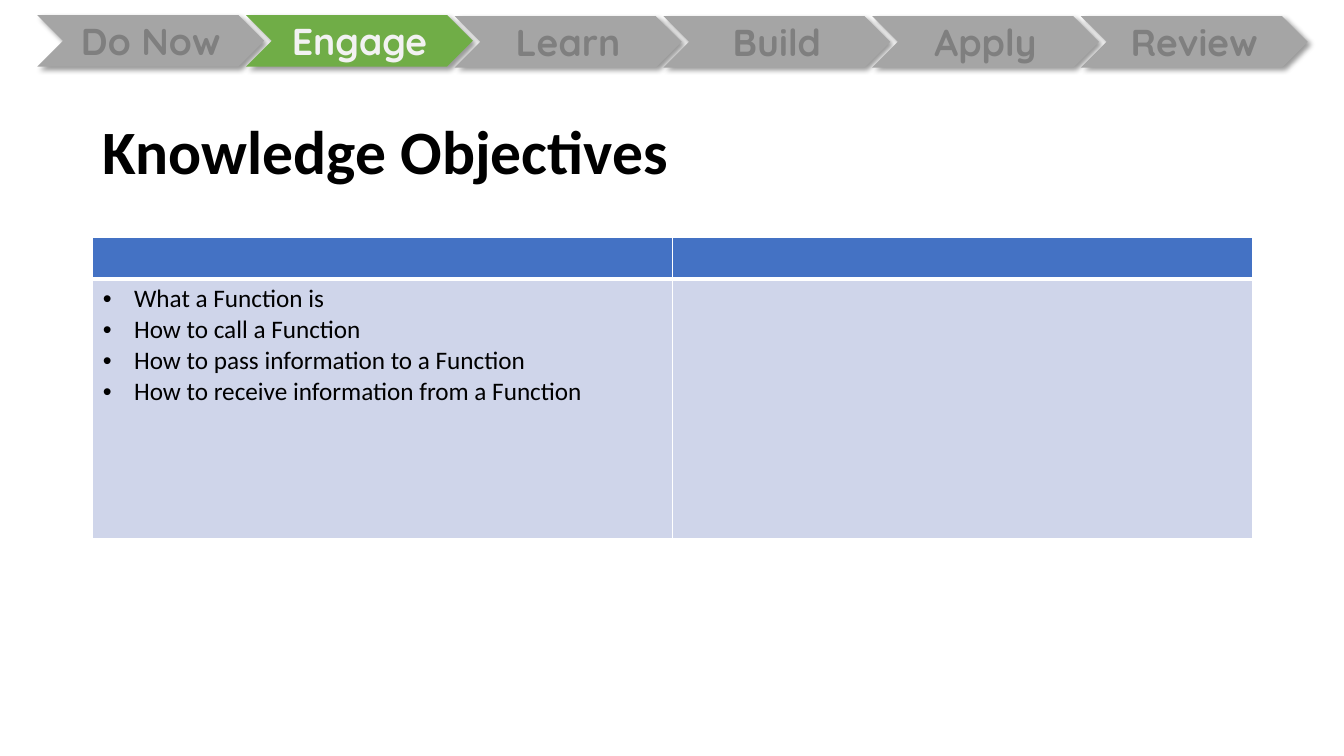
from lxml import etree
from pptx import Presentation
from pptx.dml.color import RGBColor
from pptx.enum.shapes import MSO_SHAPE
from pptx.enum.text import MSO_ANCHOR, PP_ALIGN
from pptx.oxml.ns import qn
from pptx.util import Inches, Pt

CHEVRON = MSO_SHAPE.CHEVRON
MIDDLE = MSO_ANCHOR.MIDDLE
LEFT, CENTER = PP_ALIGN.LEFT, PP_ALIGN.CENTER

STAGES = ["Do Now", "Engage", "Learn", "Build", "Apply", "Review"]
CURRENT_STAGE = "Engage"
OBJECTIVES = [
    "What a Function is",
    "How to call a Function",
    "How to pass information to a Function",
    "How to receive information from a Function",
]


def rgb(color):
    return RGBColor.from_string(color)


def style(p, font, size, color, bold=False):
    for r in p.runs:
        r.font.name = font
        r.font.size = Pt(size)
        r.font.bold = bold
        r.font.color.rgb = rgb(color)


def add_solid(parent, color):
    fill = etree.SubElement(parent, qn("a:solidFill"))
    return etree.SubElement(fill, qn("a:srgbClr"), val=color)


def add_shadow(sp):
    """Soft black shadow falling to the lower right."""
    sp.shadow.inherit = False
    effects = sp._element.spPr.find(qn("a:effectLst"))
    shadow = etree.SubElement(
        effects, qn("a:outerShdw"), blurRad=str(Pt(4)), dist=str(Pt(3)),
        dir=str(45 * 60000), algn="tl", rotWithShape="0")
    color = etree.SubElement(shadow, qn("a:srgbClr"), val="000000")
    etree.SubElement(color, qn("a:alpha"), val="40000")


def add_stage(s, label, left, top):
    current = label == CURRENT_STAGE
    sp = s.shapes.add_shape(CHEVRON, Inches(left), Inches(top),
                            Inches(2.25), Inches(0.51))
    sp.fill.solid()
    sp.fill.fore_color.rgb = rgb("70AD47" if current else "A5A5A5")
    sp.line.fill.background()
    add_shadow(sp)
    tf = sp.text_frame
    tf.text = label
    tf.vertical_anchor = MIDDLE
    p = tf.paragraphs[0]
    p.alignment = CENTER
    style(p, "Quicksand", 26.7, "F2F2F2" if current else "7F7F7F", bold=True)


def set_title(s, text):
    title = s.shapes.title
    title.left, title.top = Inches(0.92), Inches(0.81)
    title.width, title.height = Inches(11.5), Inches(1.45)
    tf = title.text_frame
    tf.text = text
    tf.vertical_anchor = MIDDLE
    p = tf.paragraphs[0]
    p.alignment = LEFT
    p.line_spacing = 0.9
    style(p, "Calibri", 44, "000000", bold=True)


def format_cell(cell, fill, top=1, bottom=1):
    """White borders, widths in points, and a plain fill."""
    tcPr = cell._tc.get_or_add_tcPr()
    for side, width in (("L", 1), ("R", 1), ("T", top), ("B", bottom)):
        add_solid(etree.SubElement(tcPr, qn("a:ln" + side), w=str(Pt(width))),
                  "FFFFFF")
    cell.fill.solid()
    cell.fill.fore_color.rgb = rgb(fill)


def add_bullet(p):
    pPr = p._p.get_or_add_pPr()
    indent = Inches(0.31)
    pPr.set("marL", str(indent))
    pPr.set("indent", str(-indent))
    etree.SubElement(pPr, qn("a:buFont"), typeface="Arial")
    etree.SubElement(pPr, qn("a:buChar"), char="•")


def add_objectives_table(s):
    table = s.shapes.add_table(2, 2, Inches(0.92), Inches(2.36),
                               Inches(11.5), Inches(2.98)).table
    table.rows[0].height = Inches(0.4)
    table.rows[1].height = Inches(2.58)
    for col in range(2):
        format_cell(table.cell(0, col), "4472C4", bottom=3)
        format_cell(table.cell(1, col), "CFD5EA", top=3)
    tf = table.cell(1, 0).text_frame
    tf.text = "\n".join(OBJECTIVES)
    for p in tf.paragraphs:
        add_bullet(p)
        style(p, "Calibri", 18, "000000")


def main():
    prs = Presentation()
    prs.slide_width, prs.slide_height = Inches(13.33), Inches(7.5)
    s = prs.slides.add_slide(prs.slide_layouts[5])
    for i, label in enumerate(STAGES):
        add_stage(s, label, 0.37 + 2.07 * i, 0.15 if i < 2 else 0.16)
    set_title(s, "Knowledge Objectives")
    add_objectives_table(s)
    prs.save("out.pptx")


if __name__ == "__main__":
    main()
